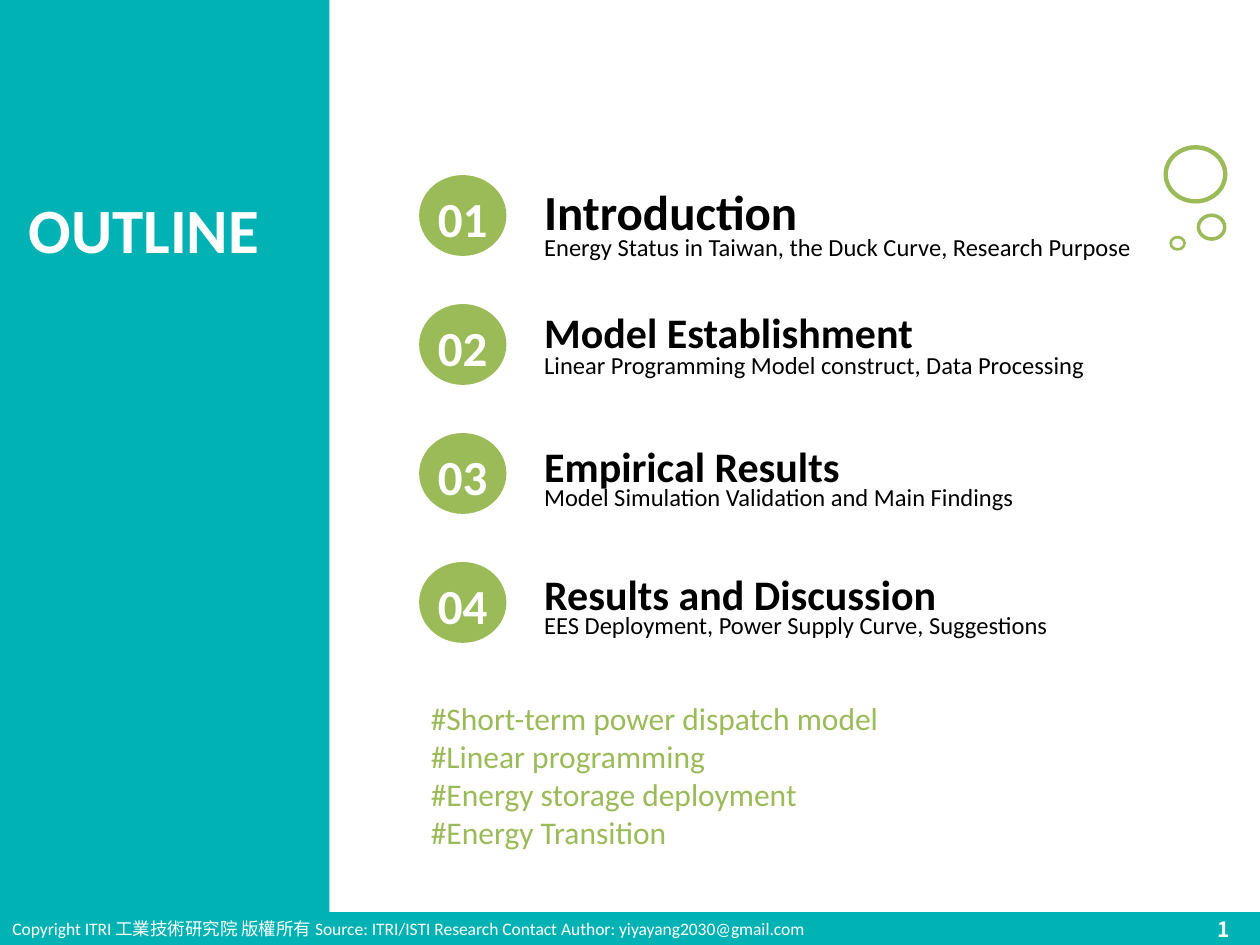
import pptx
import pptx.dml.color
import pptx.enum.shapes
import pptx.enum.text
import pptx.oxml
import pptx.oxml.ns
import pptx.util

Cm, Pt = pptx.util.Cm, pptx.util.Pt
ALIGN = pptx.enum.text.PP_ALIGN
ANCHOR = pptx.enum.text.MSO_ANCHOR
SHAPE = pptx.enum.shapes.MSO_SHAPE

# Content
TITLE = "OUTLINE"
CHAPTERS = [  # heading, size, heading top, summary, summary top (cm)
    ("Introduction", 28, 3.53,
     "Energy Status in Taiwan, the Duck Curve, Research Purpose", 4.55),
    ("Model Establishment", 24, 6.05,
     "Linear Programming Model construct, Data Processing", 6.93),
    ("Empirical Results", 24, 8.76,
     "Model Simulation Validation and Main Findings", 9.6),
    ("Results and Discussion", 24, 11.33,
     "EES Deployment, Power Supply Curve, Suggestions", 12.17),
]
KEYWORDS = [
    "#Short-term power dispatch model",
    "#Linear programming",
    "#Energy storage deployment",
    "#Energy Transition",
]
COPYRIGHT = ("Copyright ITRI 工業技術研究院 版權所有 Source: ITRI/ISTI Research "
             "Contact Author: yiyayang2030@gmail.com")
BUBBLES = [  # left, top, width, height (cm), line width (pt)
    (23.5, 2.97, 1.2, 1.09, 2.5),
    (24.16, 4.34, 0.53, 0.48, 2),
    (23.6, 4.78, 0.28, 0.25, 1.5),
]

# Style and layout (cm)
TEAL, GREEN, WHITE, BLACK = "00B2B3", "9BBB59", "FFFFFF", "000000"
WIDTH, HEIGHT = 25.4, 19.05
PANEL_WIDTH, FOOTER_TOP = 6.64, 18.39
BADGE_LEFT, BADGE_TOP, BADGE_STEP = 8.45, 3.53, 2.6
BADGE_WIDTH, BADGE_HEIGHT = 1.76, 1.63
TEXT_LEFT = 10.72


def color(value):
    return pptx.dml.color.RGBColor.from_string(value)


def add_shape(shapes, kind, box, fill=None, line=None, line_width=1):
    shape = shapes.add_shape(kind, *map(Cm, box))
    shape.shadow.inherit = False
    if fill:
        shape.fill.solid()
        shape.fill.fore_color.rgb = color(fill)
    else:
        shape.fill.background()
    if line:
        shape.line.color.rgb = color(line)
        shape.line.width = Pt(line_width)
    else:
        shape.line.fill.background()
    return shape


def write(shape, text, size, ink, bold=False, align=ALIGN.LEFT,
          anchor=ANCHOR.TOP, font="Calibri"):
    frame = shape.text_frame
    frame.text = text
    frame.word_wrap = True
    frame.auto_size = pptx.enum.text.MSO_AUTO_SIZE.NONE
    frame.vertical_anchor = anchor
    for paragraph in frame.paragraphs:
        paragraph.alignment = align
        for run in paragraph.runs:
            run.font.name = font
            run.font.size = Pt(size)
            run.font.bold = bold
            run.font.color.rgb = color(ink)


def add_text(shapes, box, text, size, ink, **style):
    write(shapes.add_textbox(*map(Cm, box)), text, size, ink, **style)


def place(shape, box):
    shape.left, shape.top, shape.width, shape.height = map(Cm, box)


def main():
    presentation = pptx.Presentation()
    presentation.slide_width, presentation.slide_height = Cm(WIDTH), Cm(HEIGHT)
    slide = presentation.slides.add_slide(presentation.slide_layouts[1])
    shapes = slide.shapes

    # Footer band and side panel, behind the placeholders
    for box in ((0, 0, PANEL_WIDTH, HEIGHT),
                (0, FOOTER_TOP, WIDTH, HEIGHT - FOOTER_TOP)):
        band = add_shape(shapes, SHAPE.RECTANGLE, box, TEAL)
        band.element.getparent().insert(2, band.element)

    # Title
    title = shapes.title
    place(title, (0, 3.71, PANEL_WIDTH, 1.8))
    write(title, TITLE, 36, WHITE, bold=True, anchor=ANCHOR.MIDDLE)
    title.text_frame.margin_left = Cm(0.58)

    # Decorative bubbles
    group = shapes.add_group_shape()
    for *box, line_width in BUBBLES:
        add_shape(group.shapes, SHAPE.OVAL, box, None, GREEN, line_width)

    # Numbered chapters
    for index, (heading, size, heading_top, summary, summary_top) in enumerate(CHAPTERS):
        top = BADGE_TOP + index * BADGE_STEP
        chapter = shapes.add_group_shape().shapes
        add_text(chapter, (TEXT_LEFT, summary_top, 13.44, 0.86), summary, 14, BLACK)
        add_text(chapter, (TEXT_LEFT, heading_top, 12.5, 1.3), heading, size, BLACK,
                 bold=True)
        add_shape(chapter, SHAPE.OVAL, (BADGE_LEFT, top, BADGE_WIDTH, BADGE_HEIGHT), GREEN)
        add_text(chapter, (BADGE_LEFT - 0.2, top + 0.14, BADGE_WIDTH + 0.4, 1.45),
                 f"{index + 1:02}", 28, WHITE, bold=True, align=ALIGN.CENTER)

    # Keywords
    keywords = slide.placeholders[1]
    place(keywords, (8.43, 13.97, 13.77, 3.33))
    write(keywords, "\n".join(KEYWORDS), 18, GREEN)
    for paragraph in keywords.text_frame.paragraphs:
        paragraph.space_before = Pt(0)
        properties = paragraph._p.get_or_add_pPr()
        properties.set("marL", "0")
        properties.set("indent", "0")
        properties.append(pptx.oxml.parse_xml(
            f"<a:buNone {pptx.oxml.ns.nsdecls('a')}/>"))

    # Footer text
    add_text(shapes, (0, FOOTER_TOP, 23.3, 0.68), COPYRIGHT, 10, WHITE)
    add_text(shapes, (24.3, 18.36, 1.1, 0.77), "1", 12, WHITE, bold=True,
             font="Noto Sans CJK SC")

    presentation.save("out.pptx")


if __name__ == "__main__":
    main()
